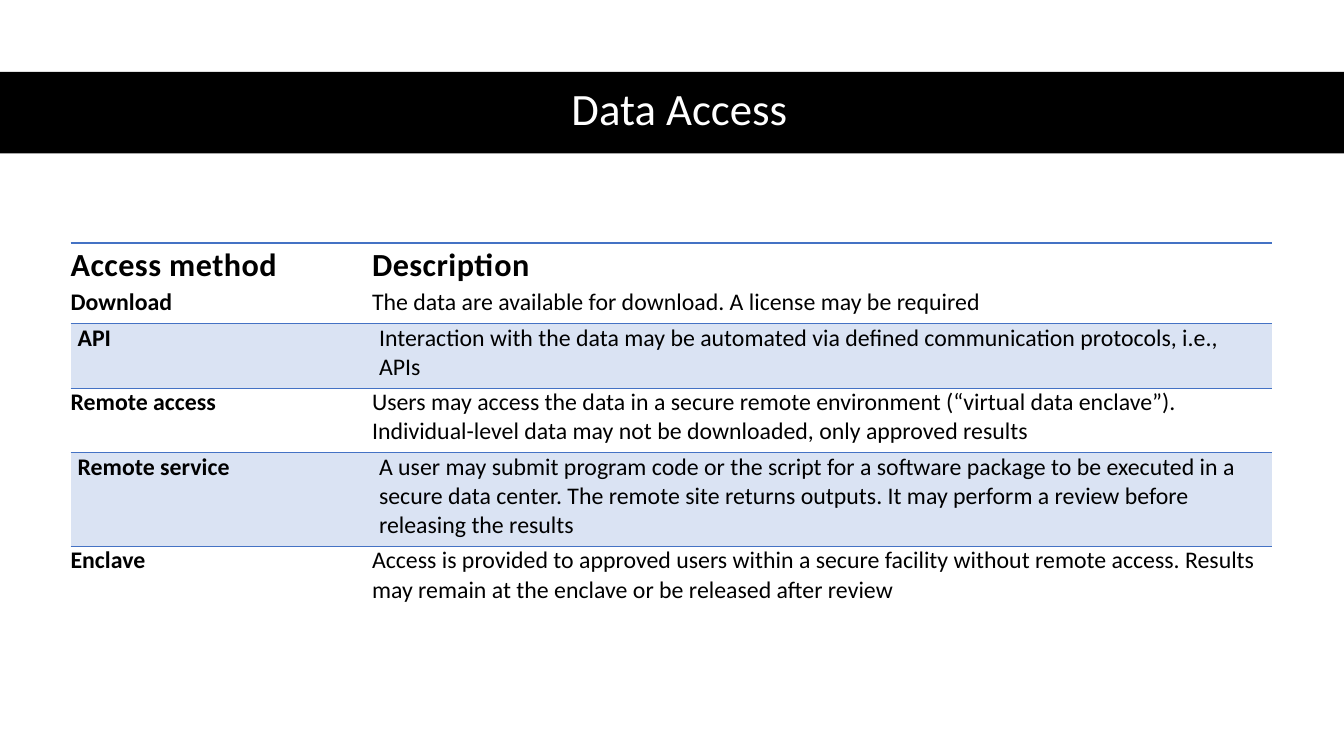
from dataclasses import dataclass

from lxml.etree import SubElement
from pptx import Presentation
from pptx.dml.color import RGBColor as Rgb
from pptx.enum.shapes import MSO_SHAPE as Shape
from pptx.enum.text import MSO_ANCHOR as Anchor, PP_ALIGN as Align
from pptx.oxml.ns import qn
from pptx.util import Inches, Pt


@dataclass(frozen=True)
class Theme:
    font: str = "Calibri"
    ink: str = "000000"
    paper: str = "FFFFFF"
    tint: str = "DAE3F3"
    rule: str = "4472C4"
    title: int = 32
    head: int = 23
    body: int = 17


THEME = Theme()
WIDE, HIGH = 13.33, 7.5
LEFT, TOP = 0.7, 2.41
COLS = (2.99, 8.93)
ROWS = (0.45, 0.35, 0.64, 0.64, 0.93, 0.64)
PLAIN = "{2D5ABB26-0587-4C30-8999-92F81FD0307C}"  # table style without grid

DATA = (
    ("Access method", "Description"),
    ("Download",
     "The data are available for download. A license may be required"),
    ("API",
     "Interaction with the data may be automated via defined "
     "communication protocols, i.e., APIs"),
    ("Remote access",
     "Users may access the data in a secure remote environment "
     "(“virtual data enclave”). Individual-level data may not be "
     "downloaded, only approved results"),
    ("Remote service",
     "A user may submit program code or the script for a software package "
     "to be executed in a secure data center. The remote site returns "
     "outputs. It may perform a review before releasing the results"),
    ("Enclave",
     "Access is provided to approved users within a secure facility without "
     "remote access. Results may remain at the enclave or be released "
     "after review"),
)


def style(frame, size, color, bold=False):
    for run in frame.paragraphs[0].runs:
        font = run.font
        font.name, font.size, font.bold = THEME.font, Pt(size), bold
        font.color.rgb = Rgb.from_string(color)


def add_band(slide, text):
    """Full-width band with the title centred on it."""
    top, tall = Inches(HIGH * 0.095), Inches(HIGH * 0.108)
    band = slide.shapes.add_shape(Shape.RECTANGLE, 0, top, Inches(WIDE), tall)
    band.shadow.inherit = False
    band.fill.solid()
    band.fill.fore_color.rgb = Rgb.from_string(THEME.ink)
    band.line.fill.background()

    box = slide.shapes.add_textbox(
        Inches(0.61), Inches(0.7), Inches(12.26), tall)
    frame = box.text_frame
    frame.text, frame.word_wrap = text, True
    frame.vertical_anchor = Anchor.MIDDLE
    frame.paragraphs[0].alignment = Align.CENTER
    frame.paragraphs[0].line_spacing = 0.9
    style(frame, THEME.title, THEME.paper)


def rule_top(cell, width):
    """Line along the upper edge of a cell."""
    props = cell._tc.get_or_add_tcPr()
    line = SubElement(props, qn("a:lnT"), w=str(Pt(width)))
    fill = SubElement(line, qn("a:solidFill"))
    SubElement(fill, qn("a:srgbClr"), val=THEME.rule)
    props.insert(0, line)


def fill_cell(cell, text, row, col):
    head, tint = row == 0, row > 0 and row % 2 == 0
    cell.text = text
    cell.margin_left = Inches(0.07 if tint else 0)
    cell.margin_right = Inches(0.01 if head else 0.11)
    cell.margin_top = cell.margin_bottom = 0
    cell.vertical_anchor = Anchor.MIDDLE if head else Anchor.TOP
    style(cell.text_frame, THEME.head if head else THEME.body, THEME.ink,
          head or col == 0)
    if head:
        run = cell.text_frame.paragraphs[0].runs[0]
        run.font._element.set("spc", "30")
    if tint:
        cell.fill.solid()
        cell.fill.fore_color.rgb = Rgb.from_string(THEME.tint)
    else:
        cell.fill.background()
    if head or tint:
        rule_top(cell, 1.5 if head else 0.75)


def add_grid(slide):
    frame = slide.shapes.add_table(
        len(ROWS), len(COLS), Inches(LEFT), Inches(TOP),
        Inches(sum(COLS)), Inches(sum(ROWS)))
    table = frame.table
    table.horz_banding = False
    table._tbl.tblPr.find(qn("a:tableStyleId")).text = PLAIN
    for col, wide in zip(table.columns, COLS):
        col.width = Inches(wide)
    for row, tall in zip(table.rows, ROWS):
        row.height = Inches(tall)
    for r, texts in enumerate(DATA):
        for c, text in enumerate(texts):
            fill_cell(table.cell(r, c), text, r, c)


def main():
    deck = Presentation()
    deck.slide_width, deck.slide_height = Inches(WIDE), Inches(HIGH)
    slide = deck.slides.add_slide(deck.slide_layouts[6])
    add_band(slide, "Data Access")
    add_grid(slide)
    deck.save("out.pptx")


if __name__ == "__main__":
    main()
